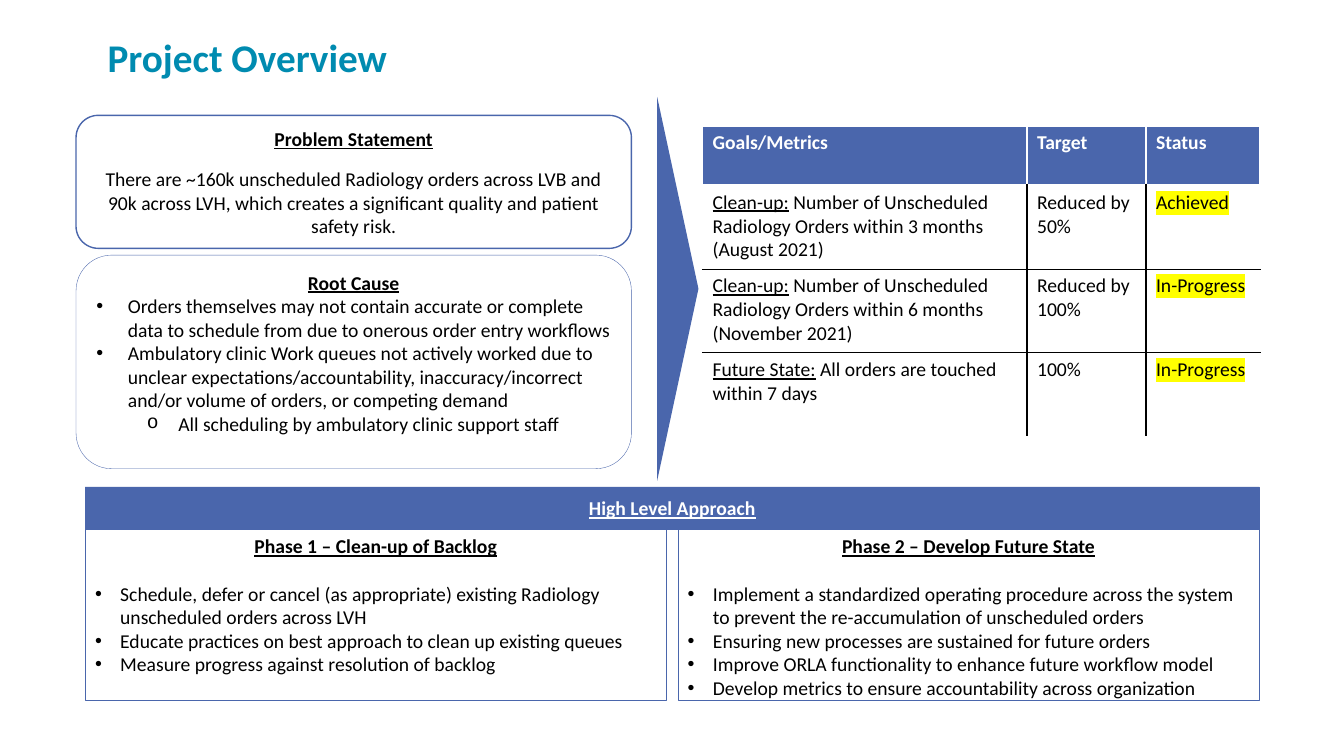
"""Build a one-slide project overview with causes, goals and approach."""
import lxml.etree
import pptx
import pptx.dml.color
import pptx.enum.shapes
import pptx.enum.text
import pptx.oxml.ns
import pptx.util

Pt = pptx.util.Pt
qn = pptx.oxml.ns.qn
Kind = pptx.enum.shapes.MSO_SHAPE
Align = pptx.enum.text.PP_ALIGN
Anchor = pptx.enum.text.MSO_ANCHOR
BLUE = pptx.dml.color.RGBColor(0x4A, 0x66, 0xAC)
TEAL = pptx.dml.color.RGBColor(0x00, 0x8B, 0xB0)
BLACK = pptx.dml.color.RGBColor(0, 0, 0)
WHITE = pptx.dml.color.RGBColor(0xFF, 0xFF, 0xFF)
YELLOW = pptx.dml.color.RGBColor(0xFF, 0xFF, 0x00)


def style(run, color=BLACK, bold=False, under=False, size=14):
    font = run.font
    font.name = "Calibri"
    font.size = Pt(size)
    font.bold = bold
    font.underline = under
    font.color.rgb = color


def panel(kind, spot, line, head, color=BLACK):
    shape = slide.shapes.add_shape(kind, *[Pt(n) for n in spot])
    shape.shadow.inherit = False
    shape.fill.background()
    shape.line.color.rgb = BLUE
    shape.line.width = Pt(line)
    frame = shape.text_frame
    frame.word_wrap = True
    frame.vertical_anchor = Anchor.TOP
    frame.text = head
    first = frame.paragraphs[0]
    first.alignment = Align.CENTER
    style(first.runs[0], color, True, True)
    return shape


deck = pptx.Presentation()
deck.slide_width = Pt(960)
deck.slide_height = Pt(540)
slide = deck.slides.add_slide(deck.slide_layouts[6])

title = slide.shapes.add_textbox(Pt(69.8), Pt(14.4), Pt(841.7), Pt(51.8))
title.text_frame.word_wrap = True
title.text_frame.vertical_anchor = Anchor.MIDDLE
title.text_frame.text = "Project Overview"
style(title.text_frame.paragraphs[0].runs[0], TEAL, True, size=28)

problem = panel(Kind.ROUNDED_RECTANGLE, (54.3, 82.4, 396.7, 95), 1, "Problem Statement")
problem.text_frame.paragraphs[0].space_after = Pt(6)
risk = problem.text_frame.add_paragraph()
risk.text = (
    "There are ~160k unscheduled Radiology orders across LVB and 90k across LVH, "
    "which creates a significant quality and patient safety risk."
)
risk.alignment = Align.CENTER
risk.space_before = Pt(6)
style(risk.runs[0])

wedge = slide.shapes.add_shape(
    Kind.ISOSCELES_TRIANGLE, Pt(347), Pt(191.5), Pt(274.3), Pt(29.5)
)
wedge.rotation = 90
wedge.shadow.inherit = False
wedge.fill.solid()
wedge.fill.fore_color.rgb = BLUE
wedge.line.fill.background()

LEFT, WIDE, SPAN = 60.8, 415.4, 838.8
lists = [
    (Kind.ROUNDED_RECTANGLE, (54.3, 182.2, 396.7, 152.6), "Root Cause", 22.5, 0, [
        (0, "Orders themselves may not contain accurate or complete data to schedule "
            "from due to onerous order entry workflows"),
        (0, "Ambulatory clinic Work queues not actively worked due to unclear "
            "expectations/accountability, inaccuracy/incorrect and/or volume of orders, "
            "or competing demand"),
        (1, "All scheduling by ambulatory clinic support staff"),
    ]),
    (Kind.RECTANGLE, (LEFT, 378, WIDE, 122), "Phase 1 – Clean-up of Backlog", 18, 17, [
        (0, "Schedule, defer or cancel (as appropriate) existing Radiology "
            "unscheduled orders across LVH"),
        (0, "Educate practices on best approach to clean up existing queues"),
        (0, "Measure progress against resolution of backlog"),
    ]),
    (Kind.RECTANGLE, (LEFT + SPAN - WIDE, 378, WIDE, 122),
     "Phase 2 – Develop Future State", 18, 17, [
        (0, "Implement a standardized operating procedure across the system to "
            "prevent the re-accumulation of unscheduled orders"),
        (0, "Ensuring new processes are sustained for future orders"),
        (0, "Improve ORLA functionality to enhance future workflow model"),
        (0, "Develop metrics to ensure accountability across organization"),
    ]),
]
for kind, spot, head, hang, gap, items in lists:
    frame = panel(kind, spot, 0.25, head).text_frame
    for rank, (level, words) in enumerate(items):
        par = frame.add_paragraph()
        par.text = words
        par.level = level
        par.alignment = Align.LEFT
        props = par._p.get_or_add_pPr()
        props.set("marL", str(Pt(hang + 36 * level)))
        props.set("indent", str(-Pt(hang)))
        face, mark = (("Arial", "•"), ("Courier New", "o"))[level]
        lxml.etree.SubElement(props, qn("a:buFont"), typeface=face)
        lxml.etree.SubElement(props, qn("a:buChar"), char=mark)
        par.space_before = Pt(0 if rank else gap)
        style(par.runs[0])

band = panel(Kind.RECTANGLE, (LEFT, 347.8, SPAN, 30.2), 0.25, "High Level Approach", WHITE)
band.text_frame.vertical_anchor = Anchor.MIDDLE
band.fill.solid()
band.fill.fore_color.rgb = BLUE

goals = [
    (("", "Goals/Metrics"), "Target", "Status"),
    (("Clean-up:", " Number of Unscheduled Radiology Orders within 3 months (August 2021)"),
     "Reduced by 50%", "Achieved"),
    (("Clean-up:", " Number of Unscheduled Radiology Orders within 6 months (November 2021)"),
     "Reduced by 100%", "In-Progress"),
    (("Future State:", " All orders are touched within 7 days"), "100%", "In-Progress"),
]
widths = [231.8, 85, 81.4]
heights = [42.5, 59.8, 59.8, 59.8]
table = slide.shapes.add_table(
    4, 3, Pt(501.8), Pt(90), Pt(sum(widths)), Pt(sum(heights))
).table
table.horz_banding = False
for col, width in zip(table.columns, widths):
    col.width = Pt(width)
for row, height in zip(table.rows, heights):
    row.height = Pt(height)

for r, (goal, target, status) in enumerate(goals):
    for c, words in enumerate([goal, ("", target), ("", status)]):
        cell = table.cell(r, c)
        par = cell.text_frame.paragraphs[0]
        for part, text in enumerate(words):
            if text:
                run = par.add_run()
                run.text = text
                style(run, BLACK if r else WHITE, r == 0, part == 0)
        if r and c == 2:
            props = run._r.get_or_add_rPr()
            glow = lxml.etree.Element(qn("a:highlight"))
            lxml.etree.SubElement(glow, qn("a:srgbClr"), val=str(YELLOW))
            props.find(qn("a:solidFill")).addnext(glow)

        props = cell._tc.get_or_add_tcPr()
        edges = {"L": r and c, "R": r and c < 2, "T": r > 1, "B": 0 < r < 3}
        for side, dark in edges.items():
            width = 3 if r == 0 and side == "B" else 1
            edge = lxml.etree.SubElement(props, qn("a:ln" + side), w=str(Pt(width)))
            fill = lxml.etree.SubElement(edge, qn("a:solidFill"))
            color = BLACK if dark else WHITE
            lxml.etree.SubElement(fill, qn("a:srgbClr"), val=str(color))
        if r:
            cell.fill.background()
        else:
            cell.fill.solid()
            cell.fill.fore_color.rgb = BLUE

deck.save("out.pptx")
